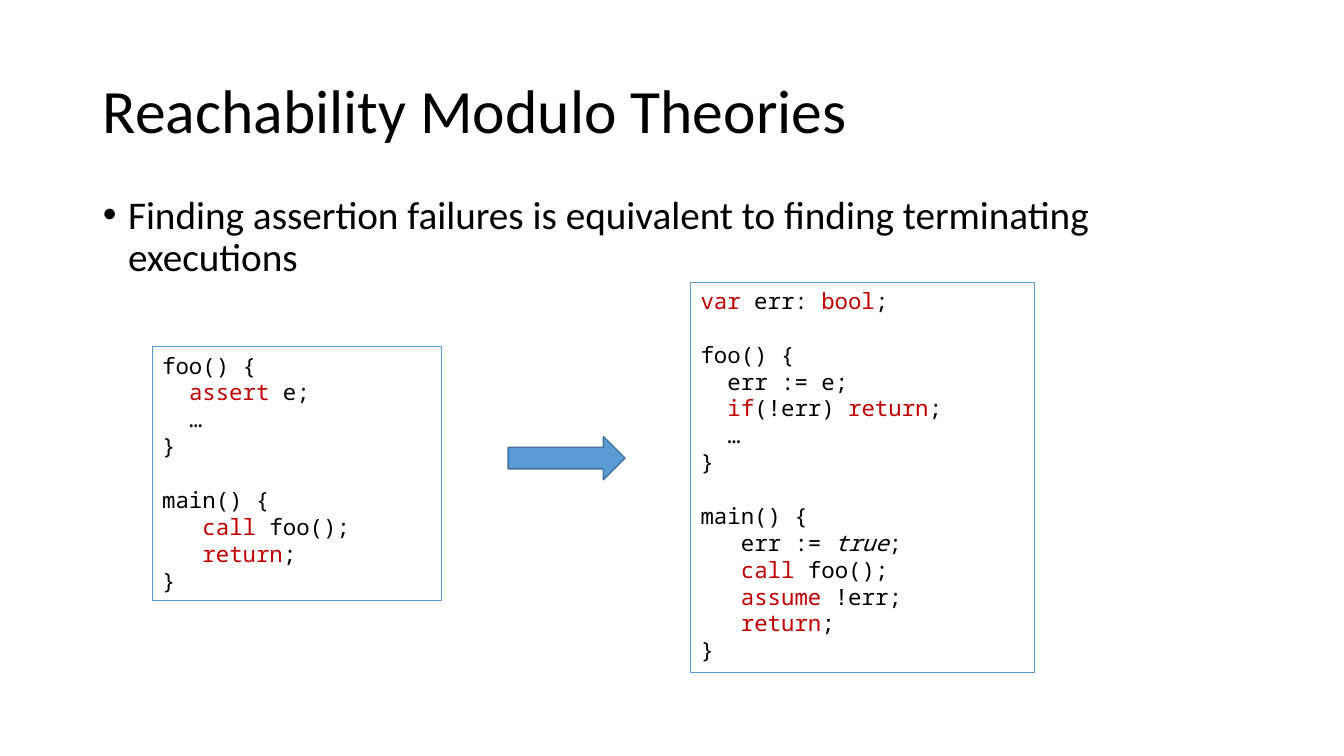
import pptx
import pptx.util
import pptx.dml.color
import pptx.enum.shapes
import pptx.enum.text

BLACK, RED, BLUE, NAVY = "000000", "C00000", "5B9BD5", "43739E"
SHAPE = pptx.enum.shapes.MSO_SHAPE
FIT = pptx.enum.text.MSO_AUTO_SIZE
ALIGN = pptx.enum.text.PP_ALIGN
ANCHOR = pptx.enum.text.MSO_ANCHOR

# Code: keywords stand between asterisks, leading spaces give the indent
BEFORE = """foo() {
  *assert* e;
  …
}

main() {
   *call* foo();
   *return*;
}"""
AFTER = """*var* err: *bool*;

foo() {
  err := e;
  *if*(!err) *return*;
  …
}

main() {
   err := _true_;
   *call* foo();
   *assume* !err;
   *return*;
}"""


def color(code):
    return pptx.dml.color.RGBColor.from_string(code)


class Deck:
    """Style and current slide; places are in percent of the slide."""
    sans, mono = "Calibri", "Noto Sans Mono"
    code_size, char, row = 16, 9.6, 19.2  # points

    def __init__(self):
        self.file = pptx.Presentation()
        self.file.slide_width = pptx.util.Inches(13.33)
        self.file.slide_height = pptx.util.Inches(7.5)
        self.slide = self.file.slides.add_slide(self.file.slide_layouts[1])

    def box(self, place):
        wide, high = self.file.slide_width, self.file.slide_height
        return [int(part * size / 100)
                for part, size in zip(place, (wide, high, wide, high))]

    def font(self, para, name, size):
        para.font.name = name
        para.font.size = pptx.util.Pt(size)
        para.font.color.rgb = color(BLACK)

    def indent(self, para, left, first=0):
        props = para._p.get_or_add_pPr()
        props.set("marL", str(int(pptx.util.Pt(left))))
        props.set("indent", str(int(pptx.util.Pt(first))))

    def holder(self, index, place, text, size, anchor):
        item = self.slide.placeholders[index]
        item.left, item.top, item.width, item.height = self.box(place)
        frame = item.text_frame
        frame.text = text
        frame.auto_size = FIT.NONE
        frame.vertical_anchor = anchor
        para = frame.paragraphs[0]
        para.alignment = ALIGN.LEFT
        para.line_spacing = 0.9
        self.font(para, self.sans, size)
        return para

    def title(self, place, text):
        self.holder(0, place, text, 44, ANCHOR.MIDDLE)

    def bullet(self, place, text):
        para = self.holder(1, place, text, 28, ANCHOR.TOP)
        para.space_before = pptx.util.Pt(10)
        self.indent(para, 18, -18)

    def shape(self, kind, place, line, width, fill=None):
        item = self.slide.shapes.add_shape(kind, *self.box(place))
        item.shadow.inherit = False
        item.line.color.rgb = color(line)
        item.line.width = pptx.util.Pt(width)
        if fill:
            item.fill.solid()
            item.fill.fore_color.rgb = color(fill)
        else:
            item.fill.background()
        return item

    def code(self, place, text):
        frame = self.shape(SHAPE.RECTANGLE, place, BLUE, 0.5).text_frame
        frame.word_wrap = True
        frame.auto_size = FIT.SHAPE_TO_FIT_TEXT
        frame.vertical_anchor = ANCHOR.TOP
        para, gap = frame.paragraphs[0], 0
        for line in text.split("\n"):
            if not line:
                gap = self.row
                continue
            if para.runs:
                para = frame.add_paragraph()
            para.alignment = ALIGN.LEFT
            para.space_before = pptx.util.Pt(gap)
            gap = 0
            self.font(para, self.mono, self.code_size)
            bare = line.lstrip()
            self.indent(para, (len(line) - len(bare)) * self.char)
            self.runs(para, bare)

    def runs(self, para, line):
        for i, part in enumerate(line.split("*")):
            for j, word in enumerate(part.split("_")):
                if not word:
                    continue
                run = para.add_run()
                run.text = word
                if i % 2:
                    run.font.color.rgb = color(RED)
                if j % 2:
                    run.font.italic = True


def main():
    deck = Deck()
    # Heading and claim
    deck.title((6.9, 5.33, 86.27, 19.33), "Reachability Modulo Theories")
    deck.bullet((6.9, 25.2, 86.27, 15.33),
                "Finding assertion failures is equivalent to finding "
                "terminating executions")
    # Program before and after the change
    deck.code((11.33, 45.87, 21.53, 33.6), BEFORE)
    deck.code((51.39, 37.33, 25.58, 51.6), AFTER)
    # Arrow between them
    deck.shape(SHAPE.RIGHT_ARROW, (37.81, 57.73, 8.7, 5.73), NAVY, 1, BLUE)
    deck.file.save("out.pptx")


if __name__ == "__main__":
    main()
